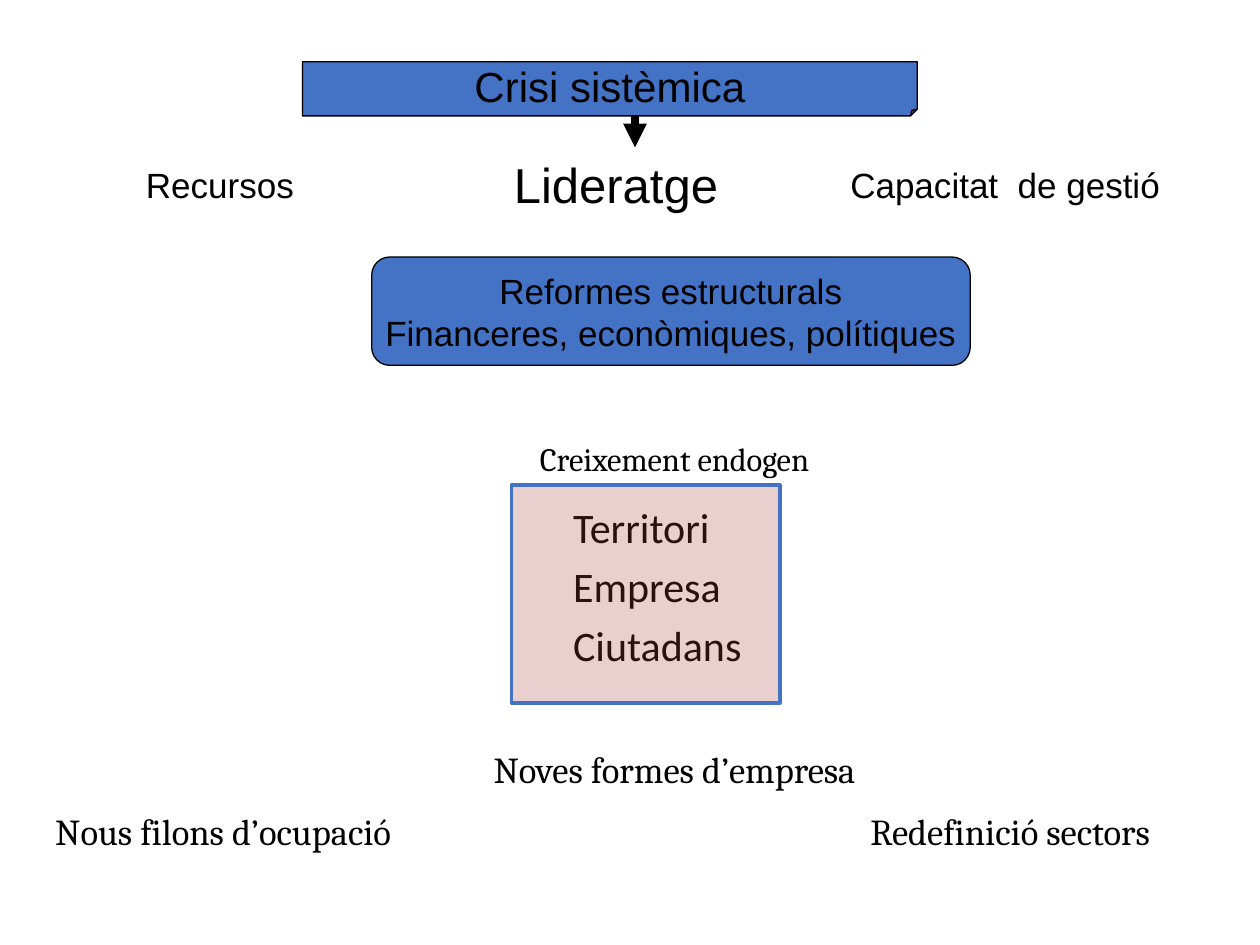
"""Build the slide on systemic crisis, leadership and structural reforms."""
from lxml import etree
from pptx import Presentation
from pptx import util as u
from pptx.dml.color import RGBColor
from pptx.enum import shapes, text
from pptx.oxml.ns import qn

COLORS = {"ink": "000000", "blue": "4472C4", "red": "A94543"}


def write(shape, lines, size, face, align=text.PP_ALIGN.LEFT, wrap=False, raised=False):
    frame = shape.text_frame
    frame.word_wrap = wrap
    for index, line in enumerate(lines):
        para = frame.paragraphs[0] if index == 0 else frame.add_paragraph()
        para.alignment = align
        span = para.add_run()
        span.text = line
        para.font.size = u.Pt(size)
        para.font.name = face
        para.font.color.rgb = RGBColor.from_string(COLORS["ink"])
        if raised:
            span._r.get_or_add_rPr().set("baseline", "30000")


def add_block(kind, place, fill, line, width):
    block = page.shapes.add_shape(kind, *map(u.Inches, place))
    block.shadow.inherit = False
    block.fill.solid()
    block.fill.fore_color.rgb = RGBColor.from_string(COLORS[fill])
    block.line.color.rgb = RGBColor.from_string(COLORS[line])
    block.line.width = u.Pt(width)
    return block


deck = Presentation()
deck.slide_width, deck.slide_height = u.Inches(10), u.Inches(7.5)
page = deck.slides.add_slide(deck.slide_layouts[6])

LEFT, RIGHT = text.PP_ALIGN.LEFT, text.PP_ALIGN.RIGHT
labels = [
    ("Recursos", (1.06, 1.25, 1.38, 0.43), 20, "Arial", LEFT, False),
    ("Lideratge", (3.98, 1.18, 2.12, 0.57), 28, "Arial", LEFT, True),
    ("Capacitat  de gestió", (6.65, 1.25, 2.76, 0.43), 20, "Arial", LEFT, True),
    ("Creixement endogen", (3.84, 3.38, 2.68, 0.46), 32, "Cambria", RIGHT, False),
    ("Noves formes d’empresa", (3.82, 5.82, 3.57, 0.71), 36, "Cambria", LEFT, False),
    ("Nous filons d’ocupació", (0.34, 6.31, 3.34, 0.71), 36, "Cambria", LEFT, False),
    ("Redefinició sectors", (6.81, 6.31, 2.76, 0.7), 36, "Cambria", LEFT, False),
]
actors = [("Territori", 1.3), ("Empresa", 1.38), ("Ciutadans", 1.55)]
for row, (actor, width) in enumerate(actors):
    place = (4.45, 3.93 + 0.47 * row, width, 0.51)
    labels.append((actor, place, 24, "Calibri", LEFT, False))

for label, place, size, face, align, wrap in labels:
    box = page.shapes.add_textbox(*map(u.Inches, place))
    box.text_frame.auto_size = text.MSO_AUTO_SIZE.SHAPE_TO_FIT_TEXT
    write(box, [label], size, face, align, wrap, raised=face == "Cambria")

KINDS = shapes.MSO_SHAPE
frame_block = add_block(KINDS.RECTANGLE, (4.06, 3.85, 2.13, 1.73), "red", "blue", 2)
tint = frame_block._element.spPr.find(qn("a:solidFill"))[0]
etree.SubElement(tint, qn("a:alpha")).set("val", "25000")

banners = [
    (KINDS.ROUNDED_RECTANGLE, (2.95, 2.04, 4.75, 0.86), "16700", 20,
     ["Reformes estructurals", "Financeres, econòmiques, polítiques"]),
    (KINDS.FOLDED_CORNER, (2.4, 0.49, 4.88, 0.43), "12500", 24, ["Crisi sistèmica"]),
]
for kind, place, bend, size, lines in banners:
    banner = add_block(kind, place, "blue", "ink", 0.75)
    guides = banner._element.spPr.find(qn("a:prstGeom")).find(qn("a:avLst"))
    guides.clear()
    etree.SubElement(guides, qn("a:gd"), name="adj", fmla=f"val {bend}")
    banner.text_frame.vertical_anchor = text.MSO_ANCHOR.MIDDLE
    write(banner, lines, size, "Arial", text.PP_ALIGN.CENTER)

arrow = page.shapes.add_connector(
    shapes.MSO_CONNECTOR.STRAIGHT, *map(u.Inches, (5.04, 0.92, 5.04, 1.17)))
arrow.line.color.rgb = RGBColor.from_string(COLORS["ink"])
arrow.line.width = u.Pt(4.5)
etree.SubElement(arrow.line._get_or_add_ln(), qn("a:tailEnd")).set("type", "triangle")
etree.SubElement(arrow._element.spPr, qn("a:effectLst"))

deck.save("out.pptx")
